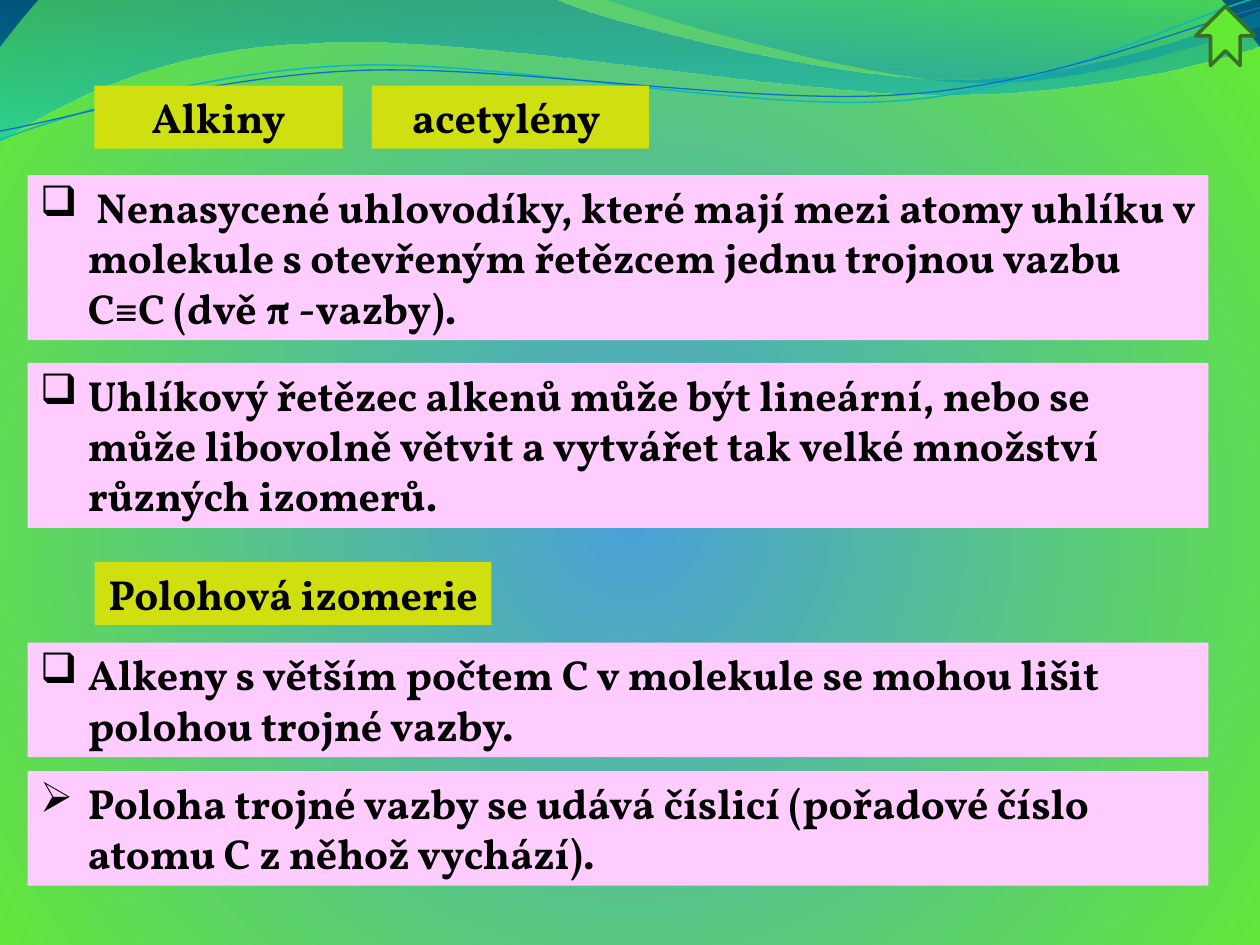
from dataclasses import dataclass
from math import cos, radians, sin

from lxml import etree
from pptx import Presentation
from pptx.dml.color import RGBColor
from pptx.enum.shapes import MSO_SHAPE
from pptx.enum.text import MSO_AUTO_SIZE, PP_ALIGN
from pptx.oxml.ns import nsdecls, qn
from pptx.util import Pt

PX = 9144
ARROW = MSO_SHAPE.NOTCHED_RIGHT_ARROW
GROW = MSO_AUTO_SIZE.SHAPE_TO_FIT_TEXT
LEFT, CENTER = PP_ALIGN.LEFT, PP_ALIGN.CENTER
BLANK = 6
INDENT = 38
BOX, POINTER = "q", "Ø"
COLORS = {
    "center": "4AA0D8", "green": "64E935", "corner": "003A5C",
    "pink": "FFCCFF", "lime": "D0DF0F", "text": "000000",
    "arrow_line": "387026", "cyan": "0AB8BF", "blue": "0F6FC6",
    "wave_top": "0074A1", "wave_end": "00C6CF",
    "crest_top": "00A1A9", "crest_end": "008BBF",
}
FONT = {"name": "Vollkorn", "size": Pt(24), "bold": True}
CIRCLE = ('<a:path path="circle"><a:fillToRect l="10000" t="110000" '
          'r="10000" b="100000"/></a:path>')
DOWN = '<a:lin ang="5400000" scaled="0"/>'


@dataclass(frozen=True)
class Stop:
    pos: int
    color: str
    alpha: int = 100


@dataclass(frozen=True)
class Label:
    x: int
    y: int
    w: int
    h: int
    text: str
    bullet: str = ""


@dataclass(frozen=True)
class Wave:
    box: tuple
    segments: tuple
    stops: tuple = ()
    line: str = ""
    width: float = 0
    rotation: float = 0


BACKDROP = (Stop(0, "center"), Stop(100, "green"), Stop(100, "corner"))
WAVES = (
    Wave((-1, -1, 1002, 114),
         (((0, 0),), ((440, -1),),
          ((476, 17), (664, 63), (758, 63)),
          ((853, 63), (958, 26), (1000, 9)), ((1001, 36),),
          ((983, 44), (870, 76), (746, 75)),
          ((622, 75), (382, 28), (257, 34)),
          ((129, 36), (46, 83), (-1, 113)), ((0, 0),)),
         stops=(Stop(0, "wave_top", 45), Stop(100, "wave_end", 55))),
    Wave((479, -1, 521, 70),
         (((479, -1),), ((509, 11), (682, 62), (769, 65)),
          ((856, 69), (961, 32), (1000, 21)), ((1000, 0),), ((479, -1),)),
         stops=(Stop(0, "crest_top", 30), Stop(80, "crest_end", 45))),
    Wave((-2, 22, 1002, 71),
         (((0, 111),), ((48, 93), (158, 57), (277, 52)),
          ((395, 47), (593, 89), (713, 80)),
          ((833, 71), (938, 15), (998, -2))),
         line="cyan", width=0.85, rotation=357.3),
    Wave((-2, 30, 1003, 58),
         (((0, 104),), ((47, 96), (164, 61), (283, 56)),
          ((403, 51), (597, 84), (717, 75)),
          ((836, 67), (941, 21), (1000, 6))),
         line="blue", width=0.75, rotation=357.3),
)
LABELS = (
    Label(22, 139, 937, 131, " Nenasycené uhlovodíky, které mají mezi atomy uhlíku v "
          "molekule s otevřeným řetězcem jednu trojnou vazbu C≡C (dvě π -vazby).", BOX),
    Label(75, 68, 197, 50, "Alkiny"),
    Label(22, 288, 937, 131, "Uhlíkový řetězec alkenů může být lineární, nebo se může "
          "libovolně větvit a vytvářet tak velké množství různých izomerů.", BOX),
    Label(75, 446, 315, 50, "Polohová izomerie"),
    Label(22, 510, 937, 91, "Alkeny s větším počtem C v molekule se mohou lišit "
          "polohou trojné vazby.", BOX),
    Label(22, 612, 937, 91, "Poloha trojné vazby se udává číslicí (pořadové číslo "
          "atomu C z něhož vychází).", POINTER),
    Label(295, 68, 220, 50, "acetylény "),
)


def rgb(name: str) -> RGBColor:
    return RGBColor.from_string(COLORS[name])


def set_gradient(fill, parent, stops: tuple, direction: str) -> None:
    fill.solid()
    marks = "".join(
        f'<a:gs pos="{st.pos * 1000}"><a:srgbClr val="{COLORS[st.color]}">'
        f'<a:alpha val="{st.alpha * 1000}"/></a:srgbClr></a:gs>' for st in stops)
    grad = etree.fromstring(
        f'<a:gradFill {nsdecls("a")} rotWithShape="1"><a:gsLst>{marks}</a:gsLst>'
        f'{direction}</a:gradFill>')
    parent.replace(parent.find(qn("a:solidFill")), grad)


def to_local(point: tuple, wave: Wave) -> tuple:
    x, y, w, h = wave.box
    dx, dy = point[0] - x - w / 2, point[1] - y - h / 2
    a = radians(-wave.rotation)
    return (round((w / 2 + dx * cos(a) - dy * sin(a)) * PX),
            round((h / 2 + dx * sin(a) + dy * cos(a)) * PX))


def set_curves(sp, wave: Wave) -> None:
    outline = sp._element.spPr.find(".//" + qn("a:path"))
    for child in list(outline):
        outline.remove(child)
    outline.set("w", str(wave.box[2] * PX))
    outline.set("h", str(wave.box[3] * PX))
    for i, seg in enumerate(wave.segments):
        tag = "a:moveTo" if i == 0 else "a:lnTo" if len(seg) == 1 else "a:cubicBezTo"
        step = etree.SubElement(outline, qn(tag))
        for point in seg:
            x, y = to_local(point, wave)
            etree.SubElement(step, qn("a:pt"), x=str(x), y=str(y))
    if wave.stops:
        etree.SubElement(outline, qn("a:close"))


def draw_wave(s, wave: Wave) -> None:
    x, y, w, h = wave.box
    fb = s.shapes.build_freeform(x, y, scale=PX)
    fb.add_line_segments([(x + w, y + h)], close=False)
    sp = fb.convert_to_shape()
    set_curves(sp, wave)
    sp.rotation = wave.rotation
    sp.shadow.inherit = False
    if wave.stops:
        set_gradient(sp.fill, sp._element.spPr, wave.stops, DOWN)
        sp.line.fill.background()
    else:
        sp.fill.background()
        sp.line.color.rgb = rgb(wave.line)
        sp.line.width = Pt(wave.width)


def draw_label(s, label: Label) -> None:
    sp = s.shapes.add_textbox(*(v * PX for v in (label.x, label.y, label.w, label.h)))
    sp.fill.solid()
    sp.fill.fore_color.rgb = rgb("pink" if label.bullet else "lime")
    tf = sp.text_frame
    tf.word_wrap = True
    tf.auto_size = GROW
    p = tf.paragraphs[0]
    p.alignment = LEFT if label.bullet else CENTER
    if label.bullet:
        pPr = p._p.get_or_add_pPr()
        pPr.set("marL", str(INDENT * PX))
        pPr.set("indent", str(-INDENT * PX))
        etree.SubElement(pPr, qn("a:buFont"), typeface="Wingdings", charset="2")
        etree.SubElement(pPr, qn("a:buChar"), char=label.bullet)
    r = p.add_run()
    r.text = label.text
    for name, value in FONT.items():
        setattr(r.font, name, value)
    r.font.color.rgb = rgb("text")


def draw_arrow(s, x: int, y: int, size: int) -> None:
    sp = s.shapes.add_shape(ARROW, x * PX, y * PX, size * PX, size * PX)
    sp.rotation = 270
    sp.shadow.inherit = False
    sp.fill.solid()
    sp.fill.fore_color.rgb = rgb("green")
    sp.line.color.rgb = rgb("arrow_line")
    sp.line.width = Pt(2)


def main() -> None:
    prs = Presentation()
    prs.slide_width, prs.slide_height = 1000 * PX, 750 * PX
    s = prs.slides.add_slide(prs.slide_layouts[BLANK])
    fill = s.background.fill
    set_gradient(fill, s._element.find(".//" + qn("p:bgPr")), BACKDROP, CIRCLE)
    for wave in WAVES:
        draw_wave(s, wave)
    for label in LABELS:
        draw_label(s, label)
    draw_arrow(s, 949, 5, 47)
    prs.save("out.pptx")


if __name__ == "__main__":
    main()
